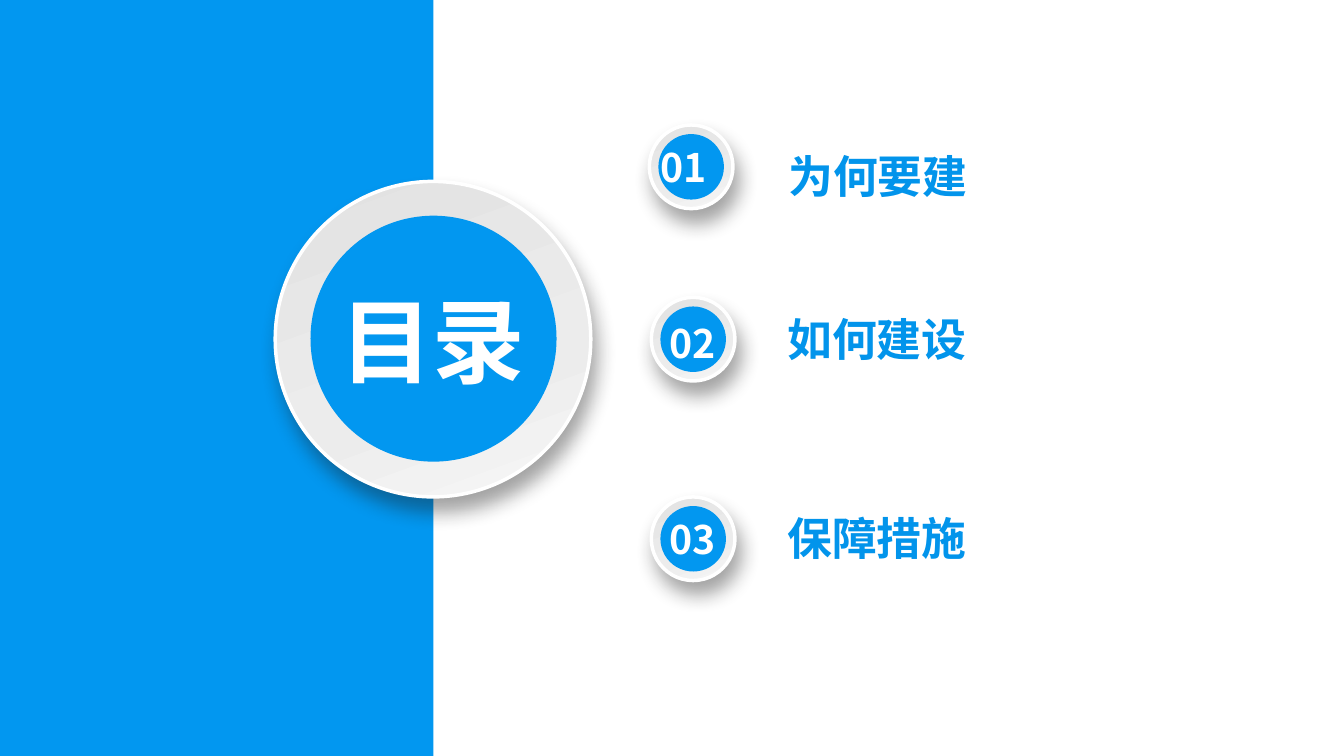
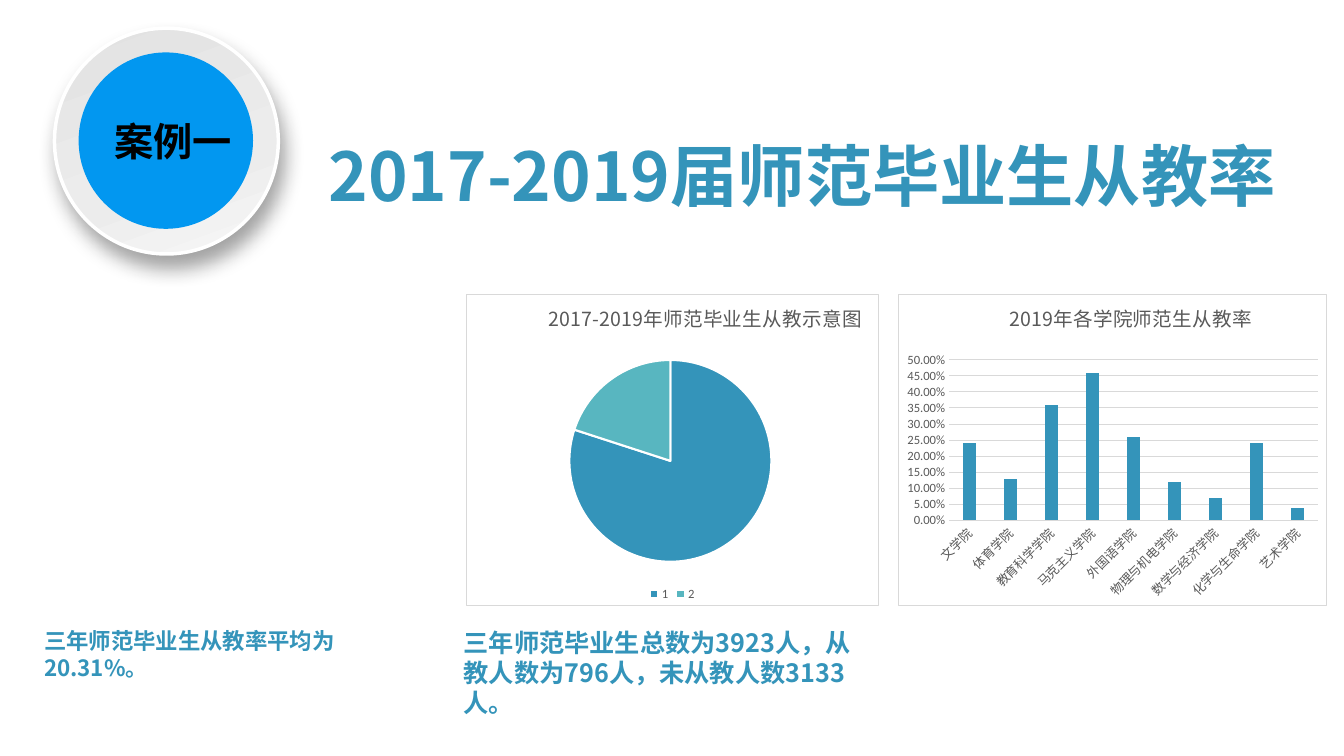
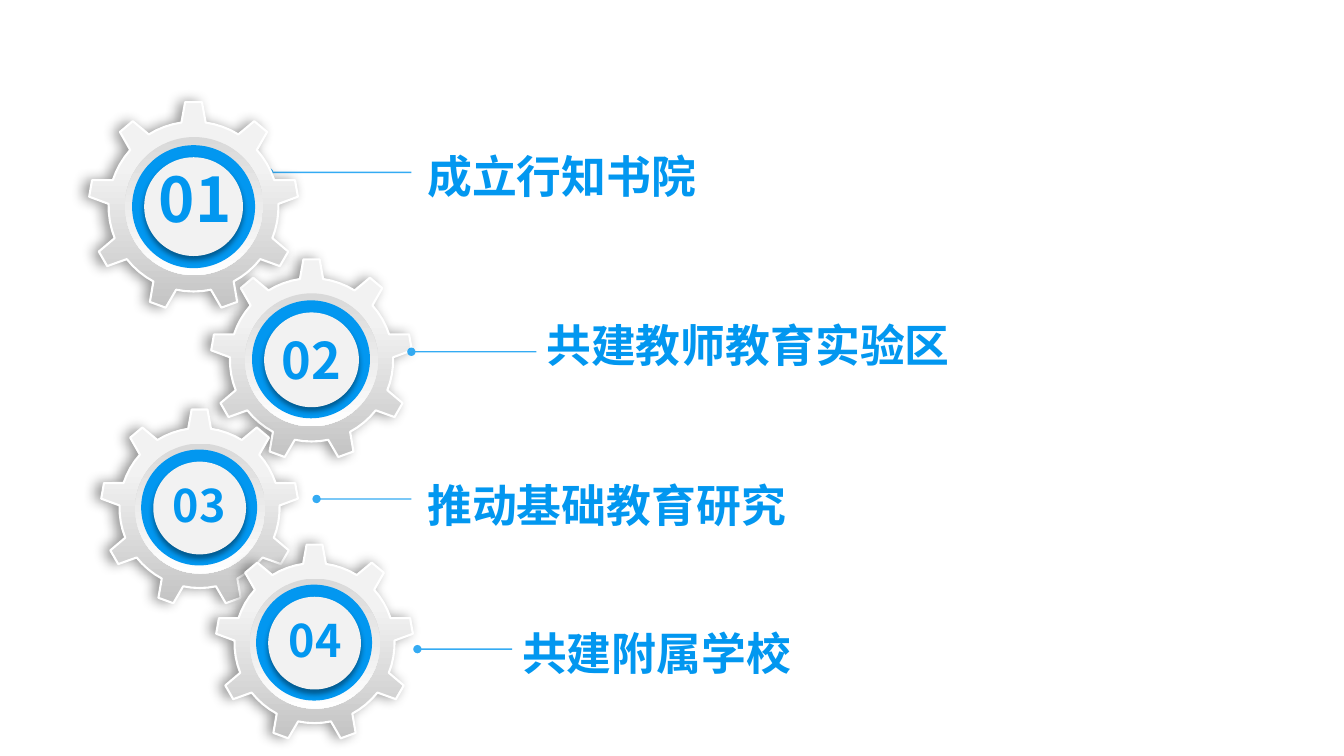
from dataclasses import dataclass
from math import cos, radians, sin
from typing import Any

from lxml.etree import SubElement
from pptx import Presentation
from pptx.chart.data import CategoryChartData
from pptx.dml.color import RGBColor
from pptx.enum.chart import XL_CHART_TYPE, XL_LEGEND_POSITION, XL_TICK_MARK
from pptx.enum.shapes import MSO_CONNECTOR, MSO_SHAPE
from pptx.enum.text import MSO_ANCHOR, MSO_AUTO_SIZE, PP_ALIGN
from pptx.oxml import parse_xml
from pptx.oxml.ns import nsdecls, qn
from pptx.util import Pt

PX = 9144
FACE = "Noto Sans CJK SC"
HUES = {
    "blue": "0297F0", "label": "0294EB", "teal": "3494BA", "aqua": "58B6C0",
    "white": "FFFFFF", "black": "000000", "pale": "F2F2F2", "grid": "D9D9D9",
    "grey": "595959", "low": "C4C4C4", "dusk": "1A1A1A",
    "rim": "E2E2E2", "mid": "ECECEC", "glow": "F7F7F7",
}


@dataclass(frozen=True)
class Fade:
    stops: tuple[tuple[int, str], ...]
    angle: int


@dataclass(frozen=True)
class Shade:
    hue: str
    blur: int
    dist: int
    angle: int


@dataclass(frozen=True)
class Topic:
    num: str
    text: str
    ring: tuple[int, int]
    num_at: tuple[int, int]
    text_at: tuple[int, int]


@dataclass(frozen=True)
class Gear:
    num: str
    mid: tuple[int, int]
    size: int
    num_at: tuple[int, int]
    points: int
    text: str
    text_at: tuple[int, int, int]
    link: tuple[int, int, int]


RING = Fade(((0, "rim"), (63, "mid"), (100, "glow")), 70)
COG = Fade(((0, "low"), (68, "pale")), 270)
DISH = Fade(((0, "grid"), (100, "white")), 90)
RING_SHADE = Shade("dusk", 14, 10, 70)
COG_SHADE = Shade("black", 9, 4, 180)
HUB_SHADE = Shade("black", 4, 3, 90)

TOPICS = (
    Topic("01", "为何要建", (644, 124), (644, 137), (772, 143)),
    Topic("02", "如何建设", (646, 295), (653, 312), (771, 304)),
    Topic("03", "保障措施", (646, 493), (653, 506), (771, 502)),
)
GEARS = (
    Gear("01", (192, 205), 104, (133, 155), 44, "成立行知书院", (414, 143, 369), (267, 408, 171)),
    Gear("02", (309, 357), 100, (248, 322), 36, "共建教师教育实验区", (532, 310, 523), (408, 532, 349)),
    Gear("03", (198, 504), 98, (137, 469), 32, "推动基础教育研究", (414, 469, 483), (314, 408, 495)),
    Gear("04", (312, 638), 98, (252, 603), 32, "共建附属学校", (508, 616, 369), (414, 508, 644)),
)
RATES = {
    "文学院": 0.24, "体育学院": 0.13, "教育科学学院": 0.36,
    "马克主义学院": 0.46, "外国语学院": 0.26, "物理与机电学院": 0.12,
    "数学与经济学院": 0.07, "化学与生命学院": 0.24, "艺术学院": 0.04,
}


def apply(item: Any, vals: dict[str, Any]) -> None:
    for key, val in vals.items():
        setattr(item, key, val)


def hue(name: str) -> RGBColor:
    return RGBColor.from_string(HUES[name])


def emu(*nums: int) -> list[int]:
    return [num * PX for num in nums]


def paint(shape: Any, fill: str | Fade, line: float = 0, shade: Shade | None = None) -> None:
    shape.shadow.inherit = False
    shape.fill.solid()
    if isinstance(fill, Fade):
        stops = "".join(
            f'<a:gs pos="{pos * 1000}"><a:srgbClr val="{HUES[name]}"/></a:gs>'
            for pos, name in fill.stops)
        props = shape.element.spPr
        props.replace(props.find(qn("a:solidFill")), parse_xml(
            f'<a:gradFill {nsdecls("a")} rotWithShape="1"><a:gsLst>{stops}</a:gsLst>'
            f'<a:lin ang="{fill.angle * 60000}" scaled="0"/></a:gradFill>'))
    else:
        shape.fill.fore_color.rgb = hue(fill)
    if line:
        shape.line.color.rgb = hue("white")
        shape.line.width = Pt(line)
    else:
        shape.line.fill.background()
    if shade:
        shape.element.spPr.find(qn("a:effectLst")).append(parse_xml(
            f'<a:outerShdw {nsdecls("a")} blurRad="{Pt(shade.blur)}" dist="{Pt(shade.dist)}" '
            f'dir="{shade.angle * 60000}" algn="ctr" rotWithShape="0">'
            f'<a:srgbClr val="{HUES[shade.hue]}"><a:alpha val="40000"/></a:srgbClr>'
            '</a:outerShdw>'))


def write(shape: Any, text: str, size: int, tint: str, align: PP_ALIGN = PP_ALIGN.LEFT,
          **frame: Any) -> None:
    body = shape.text_frame
    apply(body, {"word_wrap": True, **frame})
    para = body.paragraphs[0]
    para.alignment = align
    set_run(para, text, size, tint, True)


def set_run(para: Any, text: str, size: int, tint: str, bold: bool) -> None:
    run = para.add_run()
    run.text = text
    apply(run.font, {"name": FACE, "size": Pt(size), "bold": bold})
    run.font.color.rgb = hue(tint)
    SubElement(run.font._element, qn("a:ea"), typeface=FACE)


def label(slide: Any, box: tuple[int, ...], text: str, size: int, tint: str,
          align: PP_ALIGN = PP_ALIGN.LEFT, **frame: Any) -> None:
    shape = slide.shapes.add_textbox(*emu(*box))
    write(shape, text, size, tint, align,
          **{"auto_size": MSO_AUTO_SIZE.SHAPE_TO_FIT_TEXT, **frame})


def disc(slide: Any, mid: tuple[float, float], wide: int, high: int,
         fill: str | Fade, line: float = 0, shade: Shade | None = None) -> Any:
    left, top = round(mid[0] - wide / 2), round(mid[1] - high / 2)
    shape = slide.shapes.add_shape(MSO_SHAPE.OVAL, *emu(left, top, wide, high))
    paint(shape, fill, line, shade)
    return shape


def badge(slide: Any, left: int, top: int, wide: int, high: int) -> Any:
    mid = (left + wide / 2, top + high / 2)
    disc(slide, mid, wide, high, RING, 2.5, RING_SHADE)
    return disc(slide, mid, round(wide * 0.78), round(high * 0.78), "blue")


def draw_gear(slide: Any, gear: Gear) -> None:
    turns = [(40 * tooth + turn, reach) for tooth in range(9) for turn, reach in (
        (-8.2, 0.81), (-4.6, 1), (4.6, 1), (8.2, 0.81),
        (14, 0.81), (20, 0.81), (26, 0.81))]
    dots = [((gear.mid[0] + gear.size * reach * sin(radians(turn))) * PX,
             (gear.mid[1] - gear.size * reach * cos(radians(turn))) * PX)
            for turn, reach in turns]
    form = slide.shapes.build_freeform(*dots[0])
    form.add_line_segments(dots[1:], close=True)
    paint(form.convert_to_shape(), COG, 1.5, COG_SHADE)
    for ratio, fill, shade in ((1.32, DISH, None), (1.17, "blue", None),
                               (0.94, "pale", HUB_SHADE)):
        size = round(gear.size * ratio)
        disc(slide, gear.mid, size, size, fill, shade=shade)
    label(slide, (*gear.num_at, 121, 70), gear.num, gear.points, "blue", PP_ALIGN.CENTER)


def draw_link(slide: Any, left: int, right: int, top: int) -> None:
    link = slide.shapes.add_connector(MSO_CONNECTOR.STRAIGHT, *emu(left, top, right, top))
    link.line.color.rgb = hue("blue")
    link.line.width = Pt(1)
    line = link.line._ln
    SubElement(line.find(".//" + qn("a:srgbClr")), qn("a:alpha"), val="80000")
    SubElement(line, qn("a:headEnd"), type="oval")
    SubElement(link.element.spPr, qn("a:effectLst"))


def place(node: Any, inner: bool = False, **vals: float) -> None:
    target = '<c:layoutTarget val="inner"/>' if inner else ""
    modes = "".join(f'<c:{key}Mode val="edge"/>' for key in ("x", "y"))
    sizes = "".join(f'<c:{key} val="{val}"/>' for key, val in vals.items())
    for old in node.findall(qn("c:layout")):
        node.remove(old)
    node.insert(len(node.findall(qn("c:tx"))), parse_xml(
        f'<c:layout {nsdecls("c")}><c:manualLayout>{target}{modes}{sizes}'
        '</c:manualLayout></c:layout>'))


def small(font: Any) -> None:
    apply(font, {"name": "Calibri", "size": Pt(9)})
    font.color.rgb = hue("grey")


def add_graph(slide: Any, kind: XL_CHART_TYPE, box: tuple[int, ...], vals: dict[str, float],
              title: str, head: dict[str, float]) -> Any:
    data = CategoryChartData()
    data.categories = list(vals)
    data.add_series("Series 1", list(vals.values()))
    chart = slide.shapes.add_chart(kind, *emu(*box), data).chart
    apply(chart.font, {"name": "Calibri", "size": Pt(10)})
    chart.font.color.rgb = hue("black")
    set_run(chart.chart_title.text_frame.paragraphs[0], title, 14, "grey", False)
    place(chart.chart_title._element, **head)
    chart._chartSpace.chart.addnext(parse_xml(
        f'<c:spPr {nsdecls("c", "a")}><a:solidFill><a:srgbClr val="{HUES["white"]}"/></a:solidFill>'
        f'<a:ln w="{Pt(0.75)}"><a:solidFill><a:srgbClr val="{HUES["grid"]}"/></a:solidFill></a:ln>'
        '</c:spPr>'))
    return chart


def add_bars(slide: Any) -> None:
    chart = add_graph(slide, XL_CHART_TYPE.COLUMN_CLUSTERED, (891, 292, 425, 309), RATES,
                      "2019年各学院师范生从教率", {"x": 0.25, "y": 0.01})
    chart.has_legend = False
    plot = chart.plots[0]
    apply(plot, {"gap_width": 219, "overlap": -27, "vary_by_categories": False})
    fill = plot.series[0].format.fill
    fill.solid()
    fill.fore_color.rgb = hue("teal")
    cats, rates = chart.category_axis, chart.value_axis
    for axis in (cats, rates):
        apply(axis, {"major_tick_mark": XL_TICK_MARK.NONE, "minor_tick_mark": XL_TICK_MARK.NONE})
        small(axis.tick_labels.font)
    apply(rates, {"minimum_scale": 0, "maximum_scale": 0.5, "major_unit": 0.05})
    apply(rates.tick_labels, {"number_format": "0.00%", "number_format_is_linked": False})
    rates.format.line.fill.background()
    for line in (cats.format.line, rates.major_gridlines.format.line):
        line.color.rgb = hue("grid")
        line.width = Pt(0.75)
    turn = cats._element.find(qn("c:txPr")).find(qn("a:bodyPr"))
    turn.set("rot", "-60000000")
    turn.set("vert", "horz")


def add_pie(slide: Any) -> None:
    chart = add_graph(slide, XL_CHART_TYPE.PIE, (462, 292, 410, 309), {"1": 80, "2": 20},
                      "2017-2019年师范毕业生从教示意图", {"x": 0.19, "y": 0.01})
    place(chart._chartSpace.chart.plotArea, True, x=0.25, y=0.21, w=0.49, h=0.65)
    chart.has_legend = True
    apply(chart.legend, {"position": XL_LEGEND_POSITION.BOTTOM, "include_in_layout": False})
    small(chart.legend.font)
    plot = chart.plots[0]
    plot.vary_by_categories = True
    for spot, name in enumerate(("teal", "aqua")):
        form = plot.series[0].points[spot].format
        form.fill.solid()
        form.fill.fore_color.rgb = hue(name)
        form.line.color.rgb = hue("white")
        form.line.width = Pt(1.5)


def agenda(deck: Any) -> None:
    slide = deck.slides.add_slide(deck.slide_layouts[6])
    band = slide.shapes.add_shape(MSO_SHAPE.RECTANGLE, *emu(0, 0, 430, 750))
    paint(band, "blue")
    badge(slide, 273, 180, 313, 313)
    label(slide, (328, 276, 203, 121), "目录", 66, "white", PP_ALIGN.CENTER,
          word_wrap=False, vertical_anchor=MSO_ANCHOR.MIDDLE)
    for topic in TOPICS:
        badge(slide, *topic.ring, 83, 83)
        label(slide, (*topic.num_at, 68, 57), topic.num, 28, "white", PP_ALIGN.CENTER,
              word_wrap=False)
        label(slide, (*topic.text_at, 400, 64), topic.text, 32, "label")


def case(deck: Any) -> None:
    slide = deck.slides.add_slide(deck.slide_layouts[5])
    title = slide.shapes.title
    apply(title, dict(zip(("left", "top", "width", "height"), emu(275, 119, 1041, 108))))
    write(title, "2017-2019届师范毕业生从教率", 48, "teal", PP_ALIGN.CENTER,
          vertical_anchor=MSO_ANCHOR.MIDDLE, auto_size=MSO_AUTO_SIZE.NONE)
    add_bars(slide)
    add_pie(slide)
    for box, text, size in (
            ((34, 617, 395, 69), "三年师范毕业生从教率平均为20.31%。", 16),
            ((450, 617, 422, 111),
             "三年师范毕业生总数为3923人，从教人数为796人，未从教人数3133人。", 18)):
        label(slide, box, text, size, "teal", auto_size=MSO_AUTO_SIZE.NONE)
    write(badge(slide, 54, 28, 222, 224), "案例一", 28, "black",
          word_wrap=False, vertical_anchor=MSO_ANCHOR.MIDDLE)


def steps(deck: Any) -> None:
    slide = deck.slides.add_slide(deck.slide_layouts[6])
    for gear in GEARS[1:3]:
        draw_gear(slide, gear)
    for gear in GEARS:
        draw_link(slide, *gear.link)
        label(slide, (*gear.text_at, 64), gear.text, 32, "blue")
    for gear in GEARS[::3]:
        draw_gear(slide, gear)


def main() -> None:
    deck = Presentation()
    apply(deck, dict(zip(("slide_width", "slide_height"), emu(1333, 750))))
    for build in (agenda, case, steps):
        build(deck)
    deck.save("out.pptx")


if __name__ == "__main__":
    main()
